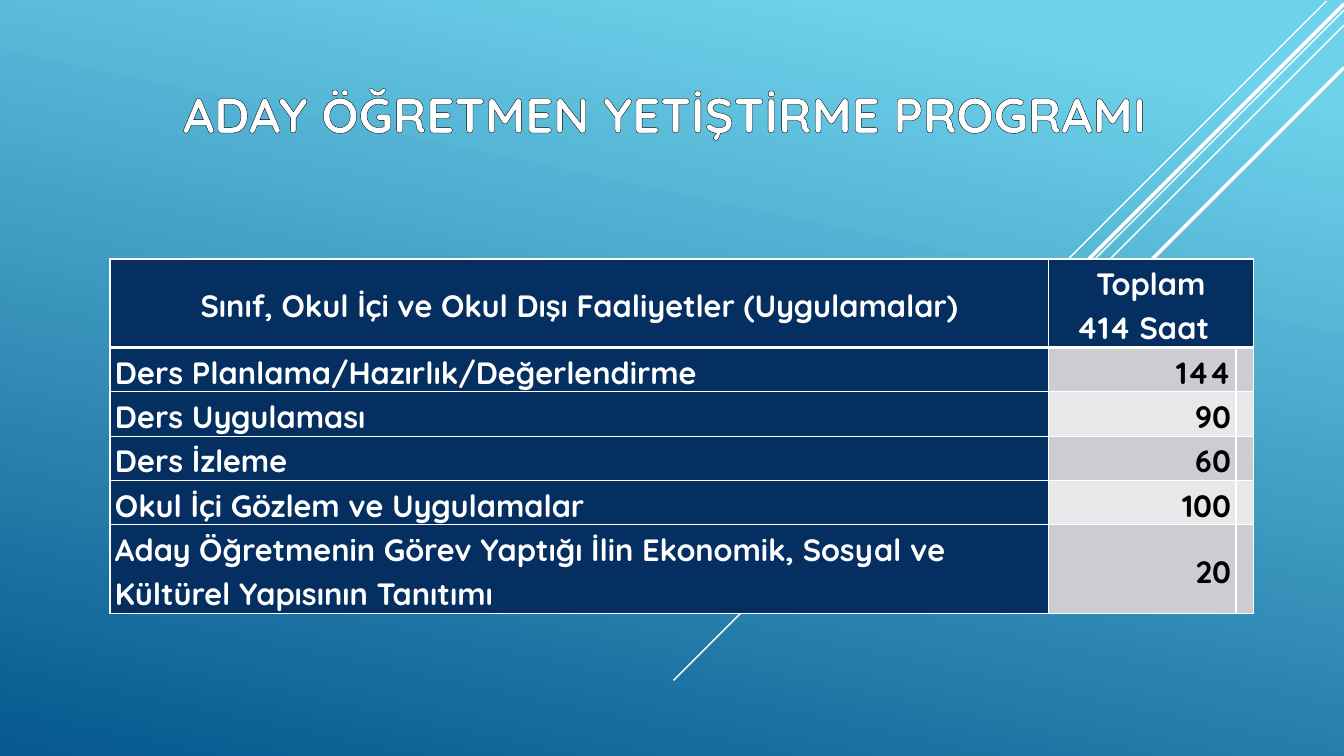
from dataclasses import dataclass

from lxml import etree
from pptx import Presentation
from pptx.dml.color import RGBColor
from pptx.enum.shapes import MSO_CONNECTOR
from pptx.enum.text import MSO_ANCHOR, MSO_AUTO_SIZE, PP_ALIGN
from pptx.oxml.ns import qn
from pptx.util import Inches, Pt

STRAIGHT = MSO_CONNECTOR.STRAIGHT
MIDDLE = MSO_ANCHOR.MIDDLE
NO_AUTOFIT = MSO_AUTO_SIZE.NONE
LEFT, CENTER, RIGHT = PP_ALIGN.LEFT, PP_ALIGN.CENTER, PP_ALIGN.RIGHT

SLIDE_WIDTH, SLIDE_HEIGHT = Inches(13.33), Inches(7.5)
TITLE_ONLY_LAYOUT = 5


@dataclass(frozen=True)
class Theme:
    font: str = "Quicksand"
    title_size: float = 35
    table_size: float = 22
    line_spacing: float = 1.15
    white: str = "FFFFFF"
    black: str = "000000"
    navy: str = "052F61"
    bands: tuple = ("CCCDD2", "E7E8EA")
    sky: tuple = ((0.1, "6ED2EB"), (1, "06588E"))
    sky_angle: float = 102
    thin: float = 1
    thick: float = 3
    title_outline: float = 0.75


THEME = Theme()

TITLE = "ADAY ÖĞRETMEN YETİŞTİRME PROGRAMI"
ACTIVITY_HEADING = "Sınıf, Okul İçi ve Okul Dışı Faaliyetler (Uygulamalar)"
TOTAL_HEADING = "Toplam\n414 Saat"
ACTIVITIES = [
    ("Ders Planlama/Hazırlık/Değerlendirme", 144),
    ("Ders Uygulaması", 90),
    ("Ders İzleme", 60),
    ("Okul İçi Gözlem ve Uygulamalar", 100),
    ("Aday Öğretmenin Görev Yaptığı İlin Ekonomik, Sosyal ve Kültürel Yapısının Tanıtımı", 20),
]
COLUMN_SHARES = (69.83, 13.95, 1.28)
ROW_SHARE = 5.62
ROW_LINES = (2, 1, 1, 1, 1, 2)
RAYS = [
    (98.7, 0.13, 55.6, 1),
    (100, 1.33, 88.67, 1),
    (100, 3.33, 72.27, 1),
    (100, 0.53, 70.67, 2.5),
    (100, 8.93, 63.33, 2.5),
]


def across(percent):
    return round(SLIDE_WIDTH * percent / 100)


def down(percent):
    return round(SLIDE_HEIGHT * percent / 100)


def color(code):
    return RGBColor.from_string(code)


def outline(tag, code, width):
    line = etree.Element(qn(tag), w=str(Pt(width)))
    fill = etree.SubElement(line, qn("a:solidFill"))
    etree.SubElement(fill, qn("a:srgbClr"), val=code)
    return line


def format_text(frame, size, ink, align, spacing=1):
    for paragraph in frame.paragraphs:
        paragraph.alignment = align
        paragraph.line_spacing = spacing
        for run in paragraph.runs:
            run.font.name = THEME.font
            run.font.size = Pt(size)
            run.font.bold = True
            run.font.color.rgb = color(ink)


def paint_background(slide):
    sky = slide.background.fill
    sky.gradient()
    sky.gradient_angle = 360 - THEME.sky_angle
    for stop, (position, code) in zip(sky.gradient_stops, THEME.sky):
        stop.position = position
        stop.color.rgb = color(code)


def add_ray(slide, start_x, start_y, drop, width):
    x, y, fall = across(start_x), down(start_y), down(drop)
    ray = slide.shapes.add_connector(STRAIGHT, x, y, x - fall, y + fall)
    ray.line.color.rgb = color(THEME.white)
    ray.line.width = Pt(width)
    etree.SubElement(ray._element.spPr, qn("a:effectLst"))


def set_title(slide):
    title = slide.shapes.title
    title.left, title.top = across(4.28), down(10.4)
    title.width, title.height = across(90.4), down(9.2)
    frame = title.text_frame
    frame.text = TITLE
    frame.word_wrap = True
    frame.auto_size = NO_AUTOFIT
    frame.vertical_anchor = MIDDLE
    format_text(frame, THEME.title_size, THEME.white, CENTER)
    properties = frame.paragraphs[0].runs[0].font._element
    properties.insert(0, outline("a:ln", THEME.black, THEME.title_outline))


def set_borders(cell, top, bottom):
    widths = {"a:lnL": THEME.thin, "a:lnR": THEME.thin, "a:lnT": top, "a:lnB": bottom}
    properties = cell._tc.get_or_add_tcPr()
    for place, (tag, width) in enumerate(widths.items()):
        properties.insert(place, outline(tag, THEME.white, width))


def fill_cell(cell, text, fill, ink, align):
    cell.text_frame.text = text
    cell.vertical_anchor = MIDDLE
    cell.margin_left = cell.margin_right = Inches(0.05)
    cell.margin_top = cell.margin_bottom = 0
    cell.fill.solid()
    cell.fill.fore_color.rgb = color(fill)
    format_text(cell.text_frame, THEME.table_size, ink, align, THEME.line_spacing)


def add_hours_table(slide):
    hours = slide.shapes.add_table(
        len(ROW_LINES), len(COLUMN_SHARES), across(8.18), down(34.27),
        across(sum(COLUMN_SHARES)), down(ROW_SHARE * sum(ROW_LINES)),
    ).table
    for column, share in zip(hours.columns, COLUMN_SHARES):
        column.width = across(share)
    for row, lines in zip(hours.rows, ROW_LINES):
        row.height = down(ROW_SHARE * lines)

    headings = (ACTIVITY_HEADING, TOTAL_HEADING, "")
    for column, heading in enumerate(headings):
        fill_cell(hours.cell(0, column), heading, THEME.navy, THEME.white, CENTER)
    total = hours.cell(0, 1)
    total.merge(hours.cell(0, 2))
    total_hours = total.text_frame.paragraphs[1]
    total_hours._p.get_or_add_pPr().set("marR", str(Inches(0.16)))

    for index, (activity, count) in enumerate(ACTIVITIES):
        row = index + 1
        band = THEME.bands[index % 2]
        fill_cell(hours.cell(row, 0), activity, THEME.navy, THEME.white, LEFT)
        fill_cell(hours.cell(row, 1), str(count), band, THEME.black, RIGHT)
        fill_cell(hours.cell(row, 2), "", band, THEME.black, RIGHT)

    for row in range(len(ROW_LINES)):
        top = THEME.thick if row == 1 else THEME.thin
        bottom = THEME.thick if row == 0 else THEME.thin
        for column in range(len(COLUMN_SHARES)):
            set_borders(hours.cell(row, column), top, bottom)


def main():
    presentation = Presentation()
    presentation.slide_width = SLIDE_WIDTH
    presentation.slide_height = SLIDE_HEIGHT
    slide = presentation.slides.add_slide(presentation.slide_layouts[TITLE_ONLY_LAYOUT])
    paint_background(slide)
    for ray in RAYS:
        add_ray(slide, *ray)
    set_title(slide)
    add_hours_table(slide)
    presentation.save("out.pptx")


if __name__ == "__main__":
    main()
